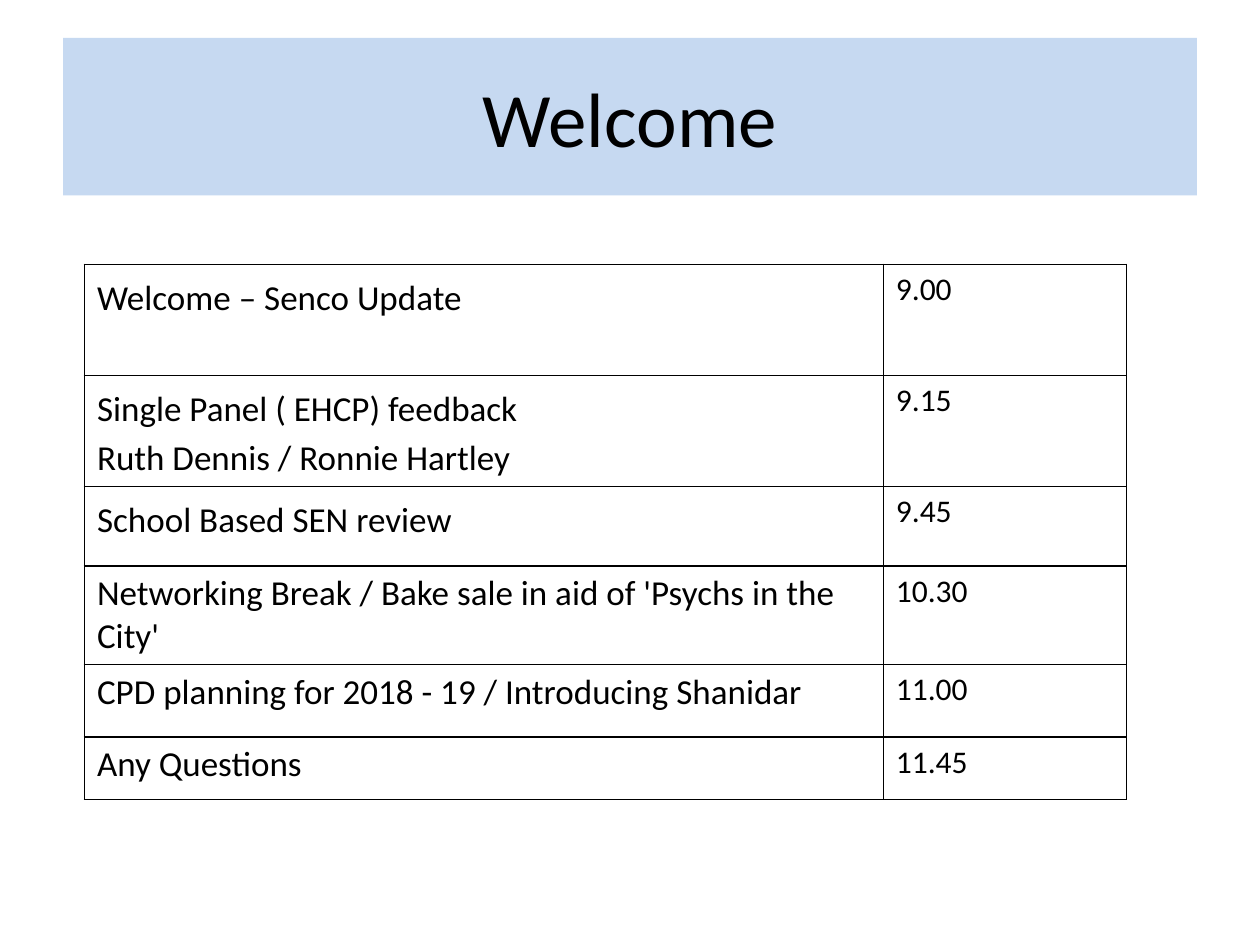
from pptx import Presentation
from pptx.dml.color import RGBColor
from pptx.enum.text import MSO_ANCHOR as Anchor, PP_ALIGN as Align
from pptx.oxml import parse_xml
from pptx.oxml.ns import nsdecls
from pptx.util import Pt

BLACK = RGBColor(0x00, 0x00, 0x00)
PALE_BLUE = RGBColor(0xC6, 0xD9, 0xF1)

AGENDA = [
    (63.5, 1.15, ["Welcome – Senco Update"], "9.00"),
    (63.5, 1.15, ["Single Panel ( EHCP) feedback", "Ruth Dennis / Ronnie Hartley"], "9.15"),
    (45.5, 1.15, ["School Based SEN review"], "9.45"),
    (56, 1, ["Networking Break / Bake sale in aid of 'Psychs in the City'"], "10.30"),
    (41.5, 1, ["CPD planning for 2018 - 19 / Introducing Shanidar"], "11.00"),
    (35.5, 1, ["Any Questions"], "11.45"),
]


class SlideBuilder:
    font_name = "Calibri"
    title_size = 44
    item_size = 20
    time_size = 18
    border_width = 1

    def __init__(self, slide):
        self.slide = slide

    def apply(self, target, formats):
        for name, value in formats.items():
            setattr(target, name, value)

    def text(self, frame, lines, size, **formats):
        for index, line in enumerate(lines):
            para = frame.paragraphs[0] if index == 0 else frame.add_paragraph()
            self.apply(para, formats)
            span = para.add_run()
            span.text = line
            self.apply(span.font, {"name": self.font_name, "size": Pt(size)})
            span.font.color.rgb = BLACK

    def title(self, text, left, top, width, height):
        box = self.slide.shapes.title
        place = {"left": left, "top": top, "width": width, "height": height}
        self.apply(box, {name: Pt(value) for name, value in place.items()})
        box.fill.solid()
        box.fill.fore_color.rgb = PALE_BLUE
        box.text_frame.vertical_anchor = Anchor.MIDDLE
        self.text(box.text_frame, [text], self.title_size, alignment=Align.CENTER)

    def border(self, cell):
        properties = cell._tc.get_or_add_tcPr()
        for index, side in enumerate(("lnL", "lnR", "lnT", "lnB")):
            line = parse_xml(
                f'<a:{side} {nsdecls("a")} w="{Pt(self.border_width)}">'
                f'<a:solidFill><a:srgbClr val="{BLACK}"/></a:solidFill></a:{side}>'
            )
            properties.insert(index, line)

    def agenda(self, rows, left, top, widths):
        height = sum(row[0] for row in rows)
        frame = self.slide.shapes.add_table(
            len(rows), len(widths), Pt(left), Pt(top), Pt(sum(widths)), Pt(height)
        )
        table = frame.table
        self.apply(table, {"first_row": False, "horz_banding": False})
        for column, width in zip(table.columns, widths):
            column.width = Pt(width)
        for row, (row_height, spacing, items, time) in zip(table.rows, rows):
            row.height = Pt(row_height)
            item_cell, time_cell = row.cells
            self.text(item_cell.text_frame, items, self.item_size, line_spacing=spacing)
            self.text(time_cell.text_frame, [time], self.time_size)
            for cell in row.cells:
                cell.fill.background()
                self.border(cell)


def main():
    deck = Presentation()
    deck.slide_width, deck.slide_height = Pt(720), Pt(540)
    page = SlideBuilder(deck.slides.add_slide(deck.slide_layouts[5]))
    page.title("Welcome", 36, 21.6, 648, 90)
    page.agenda(AGENDA, 48.25, 151, (456.5, 139))
    deck.save("out.pptx")


if __name__ == "__main__":
    main()
